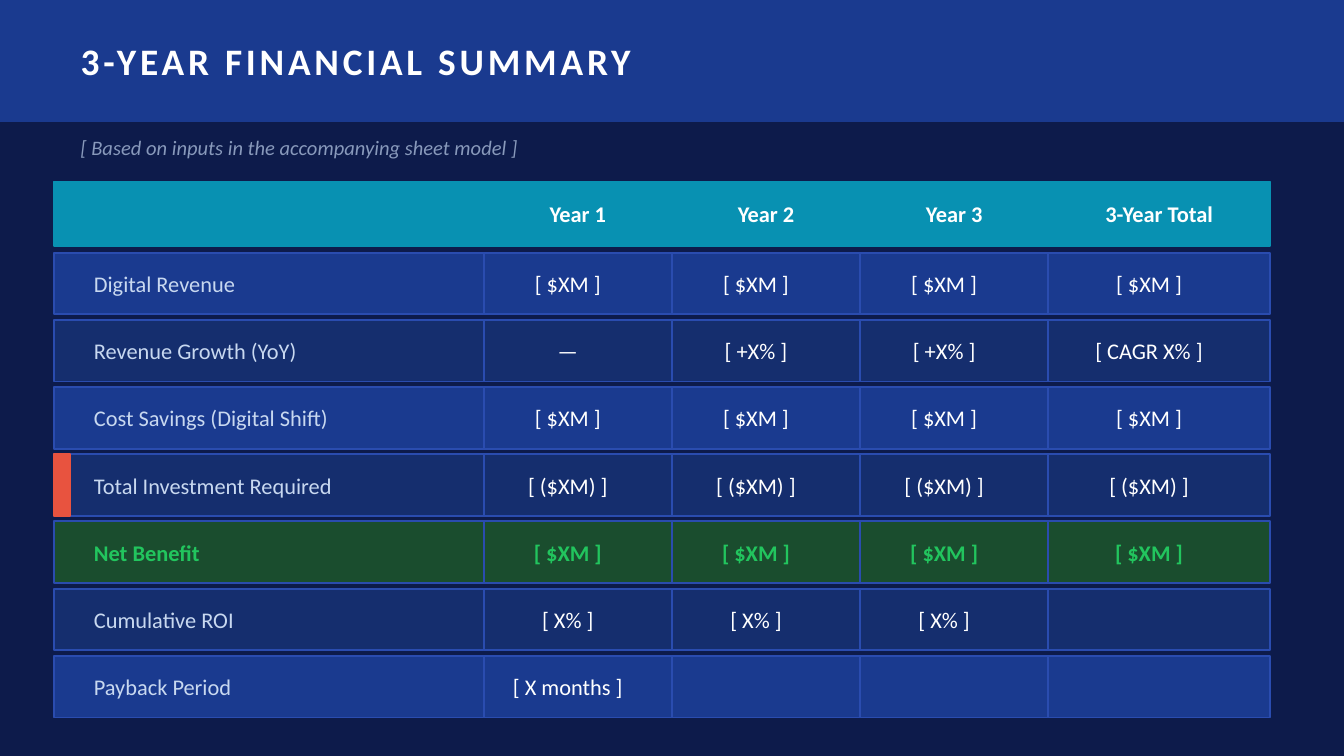
"""Build the 3-year financial summary slide."""
from itertools import accumulate

from pptx import Presentation
from pptx.dml.color import RGBColor
from pptx.enum.shapes import MSO_SHAPE
from pptx.enum.text import MSO_ANCHOR, MSO_AUTO_SIZE, PP_ALIGN
from pptx.util import Pt

INK = {
    "back": "0D1B4B", "band": "1A3A8F", "dark": "152E6E", "edge": "2A4CAF",
    "teal": "0891B2", "red": "E8533F", "moss": "1A4D2E", "green": "22C55E",
    "white": "FFFFFF", "pale": "C8D8F0", "grey": "8899BB",
}
HEADS = ["", "Year 1", "Year 2", "Year 3", "3-Year Total"]
ROWS = [
    ["Digital Revenue"] + ["[ $XM ]"] * 4,
    ["Revenue Growth (YoY)", "—", "[ +X% ]", "[ +X% ]", "[ CAGR X% ]"],
    ["Cost Savings (Digital Shift)"] + ["[ $XM ]"] * 4,
    ["Total Investment Required"] + ["[ ($XM) ]"] * 4,
    ["Net Benefit"] + ["[ $XM ]"] * 4,
    ["Cumulative ROI"] + ["[ X% ]"] * 3 + [""],
    ["Payback Period", "[ X months ]", "", "", ""],
]
WIDTHS = [230.4, 100.8, 100.8, 100.8, 118.8]
LEFTS = list(accumulate(WIDTHS[:-1], initial=28.8))
HIGH = 33.12

deck = Presentation()
deck.slide_width, deck.slide_height = Pt(720), Pt(405)
slide = deck.slides.add_slide(deck.slide_layouts[5])
shapes = slide.shapes
slide.background.fill.solid()
slide.background.fill.fore_color.rgb = RGBColor.from_string(INK["back"])


def block(left, top, width, height, fill, edge):
    shape = shapes.add_shape(
        MSO_SHAPE.RECTANGLE, Pt(left), Pt(top), Pt(width), Pt(height))
    shape.shadow.inherit = False
    shape.fill.solid()
    shape.fill.fore_color.rgb = RGBColor.from_string(INK[fill])
    shape.line.color.rgb = RGBColor.from_string(INK[edge])
    shape.line.width = Pt(1)


def label(left, top, width, height, text, color, size=12, bold=False,
          align=PP_ALIGN.LEFT, box=None):
    box = box or shapes.add_textbox(0, 0, 0, 0)
    box.left, box.top = Pt(left), Pt(top)
    box.width, box.height = Pt(width), Pt(height)
    frame = box.text_frame
    frame.text = text
    frame.word_wrap = True
    frame.auto_size = MSO_AUTO_SIZE.NONE
    frame.vertical_anchor = MSO_ANCHOR.MIDDLE
    para = frame.paragraphs[0]
    para.alignment = align
    font = para.runs[0].font
    font.name, font.size, font.bold = "Calibri", Pt(size), bold
    font.color.rgb = RGBColor.from_string(INK[color])
    return para.runs[0]


block(0, 0, 720, 64.8, "band", "band")
title = shapes.title
shapes.element.append(title.element)
run = label(36, 0, 648, 64.8, "3-YEAR FINANCIAL SUMMARY", "white", 20, True, box=title)
run.font.element.set("spc", "200") if hasattr(run.font, "element") else \
    run.text and title.element.xpath(".//a:rPr")[0].set("spc", "200")
note = label(36, 68.4, 648, 21.6,
             "[ Based on inputs in the accompanying sheet model ]", "grey", 11)
note.font.italic = True

for left, width, head in zip(LEFTS, WIDTHS, HEADS):
    block(left, 97.2, width, 34.56, "teal", "teal")
    if head:
        label(left + 3.6, 97.2, width - 7.2, 34.56, head, "white",
              bold=True, align=PP_ALIGN.CENTER)

for i, row in enumerate(ROWS):
    top = 135.36 + 36 * i
    net = row[0] == "Net Benefit"
    fill = "moss" if net else ("band", "dark")[i % 2]
    for j, (left, width, text) in enumerate(zip(LEFTS, WIDTHS, row)):
        block(left, top, width, HIGH, fill, "edge")
        if j == 0 and text == "Total Investment Required":
            block(left, top, 8.64, HIGH, "red", "red")
        if text:
            color = "green" if net else "white" if j else "pale"
            inset = 3.6 if j else 14.4
            label(left + inset, top + 2.88, width - 18, HIGH - 5.76, text, color,
                  bold=net, align=PP_ALIGN.CENTER if j else PP_ALIGN.LEFT)

deck.save("out.pptx")
